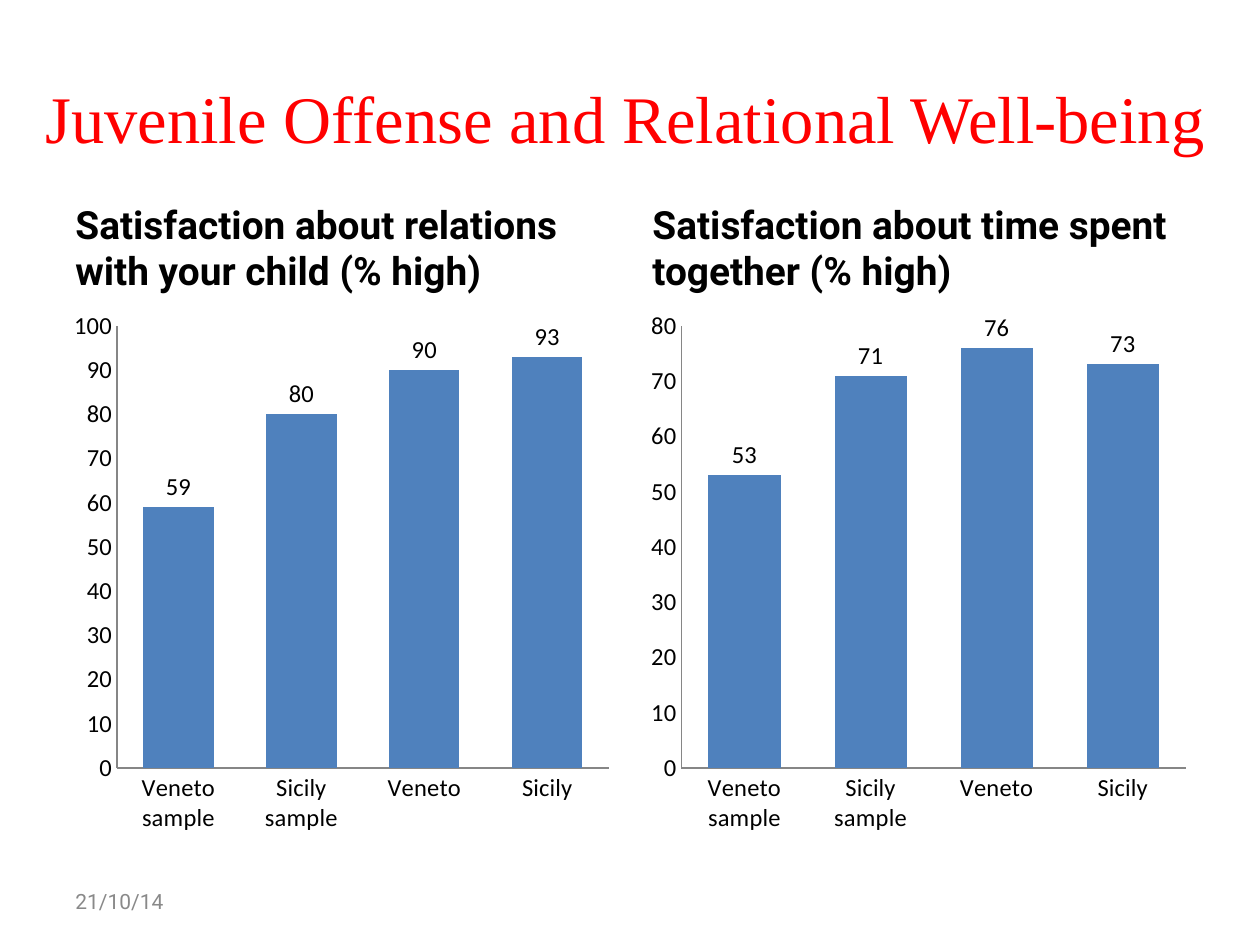
from dataclasses import dataclass

from pptx import Presentation, util as u
from pptx.chart.data import CategoryChartData
from pptx.dml.color import RGBColor
from pptx.enum import chart as charts, text


@dataclass(frozen=True)
class Style:
    font: str
    size: float
    color: str
    bold: bool = False


@dataclass(frozen=True)
class Theme:
    title: Style = Style("Times New Roman", 38, "FF0000")
    heading: Style = Style("Roboto", 22.2, "000000", True)
    chart: Style = Style("Calibri", 14, "000000")
    date: Style = Style("Roboto", 12, "898989")
    bar: str = "4F81BD"
    axis: str = "868686"


@dataclass(frozen=True)
class Box:
    left: float
    top: float
    width: float
    height: float

    def lengths(self) -> list[u.Inches]:
        return [u.Inches(value) for value in (self.left, self.top, self.width, self.height)]


@dataclass(frozen=True)
class Panel:
    heading: str
    values: tuple[int, ...]
    maximum: int


THEME = Theme()
WIDTH, HEIGHT = 10, 7.5
MARGIN = WIDTH / 20
COLUMN_WIDTH, COLUMN_GAP = 4.42, 0.16
HEADING_TOP, HEADING_HEIGHT = 1.68, 0.7
CHART_HEIGHT = 4.32
CATEGORIES = ("Veneto sample", "Sicily sample", "Veneto", "Sicily")
PANELS = (
    Panel("Satisfaction about relations with your child (% high)", (59, 80, 90, 93), 100),
    Panel("Satisfaction about time spent together (% high)", (53, 71, 76, 73), 80),
)


def apply_style(font, style: Style) -> None:
    font.name = style.font
    font.size = u.Pt(style.size)
    font.bold = style.bold
    font.color.rgb = RGBColor.from_string(style.color)


def add_text(slide, box: Box, content: str, style: Style,
             anchor=text.MSO_ANCHOR.MIDDLE, align=text.PP_ALIGN.LEFT) -> None:
    frame = slide.shapes.add_textbox(*box.lengths()).text_frame
    frame.word_wrap = True
    frame.vertical_anchor = anchor
    paragraph = frame.paragraphs[0]
    paragraph.text = content
    paragraph.alignment = align
    apply_style(paragraph.font, style)


def add_column_chart(slide, box: Box, panel: Panel) -> None:
    data = CategoryChartData(number_format="0")
    data.categories = CATEGORIES
    data.add_series("Series 1", panel.values)
    chart = slide.shapes.add_chart(
        charts.XL_CHART_TYPE.COLUMN_CLUSTERED, *box.lengths(), data).chart
    chart.has_title = False
    chart.has_legend = False
    apply_style(chart.font, THEME.chart)

    # Axes
    for axis in (chart.category_axis, chart.value_axis):
        axis.has_major_gridlines = False
        axis.major_tick_mark = charts.XL_TICK_MARK.NONE
        axis.minor_tick_mark = charts.XL_TICK_MARK.NONE
        axis.format.line.color.rgb = RGBColor.from_string(THEME.axis)
        axis.format.line.width = u.Pt(0.75)
    chart.value_axis.minimum_scale = 0
    chart.value_axis.maximum_scale = panel.maximum
    chart.value_axis.major_unit = 10

    # Bars and their values
    plot = chart.plots[0]
    plot.gap_width = 75
    plot.vary_by_categories = False
    fill = plot.series[0].format.fill
    fill.solid()
    fill.fore_color.rgb = RGBColor.from_string(THEME.bar)
    plot.has_data_labels = True
    labels = plot.data_labels
    labels.show_value = True
    labels.number_format = "0"
    labels.number_format_is_linked = False
    labels.position = charts.XL_LABEL_POSITION.OUTSIDE_END


def add_panel(slide, column: int, panel: Panel) -> None:
    left = MARGIN + column * (COLUMN_WIDTH + COLUMN_GAP)
    add_text(slide, Box(left, HEADING_TOP, COLUMN_WIDTH, HEADING_HEIGHT),
             panel.heading, THEME.heading, text.MSO_ANCHOR.BOTTOM)
    add_column_chart(
        slide, Box(left, HEADING_TOP + HEADING_HEIGHT, COLUMN_WIDTH, CHART_HEIGHT), panel)


def main() -> None:
    presentation = Presentation()
    presentation.slide_width = u.Inches(WIDTH)
    presentation.slide_height = u.Inches(HEIGHT)
    slide = presentation.slides.add_slide(presentation.slide_layouts[6])

    # Title
    add_text(slide, Box(0.12, 0.3, 9.69, 1.25), "Juvenile Offense and Relational Well-being",
             THEME.title, align=text.PP_ALIGN.CENTER)

    # Two headed charts side by side
    for column, panel in enumerate(PANELS):
        add_panel(slide, column, panel)

    # Date
    add_text(slide, Box(MARGIN, 6.95, 2.33, 0.4), "21/10/14", THEME.date)
    presentation.save("out.pptx")


if __name__ == "__main__":
    main()
